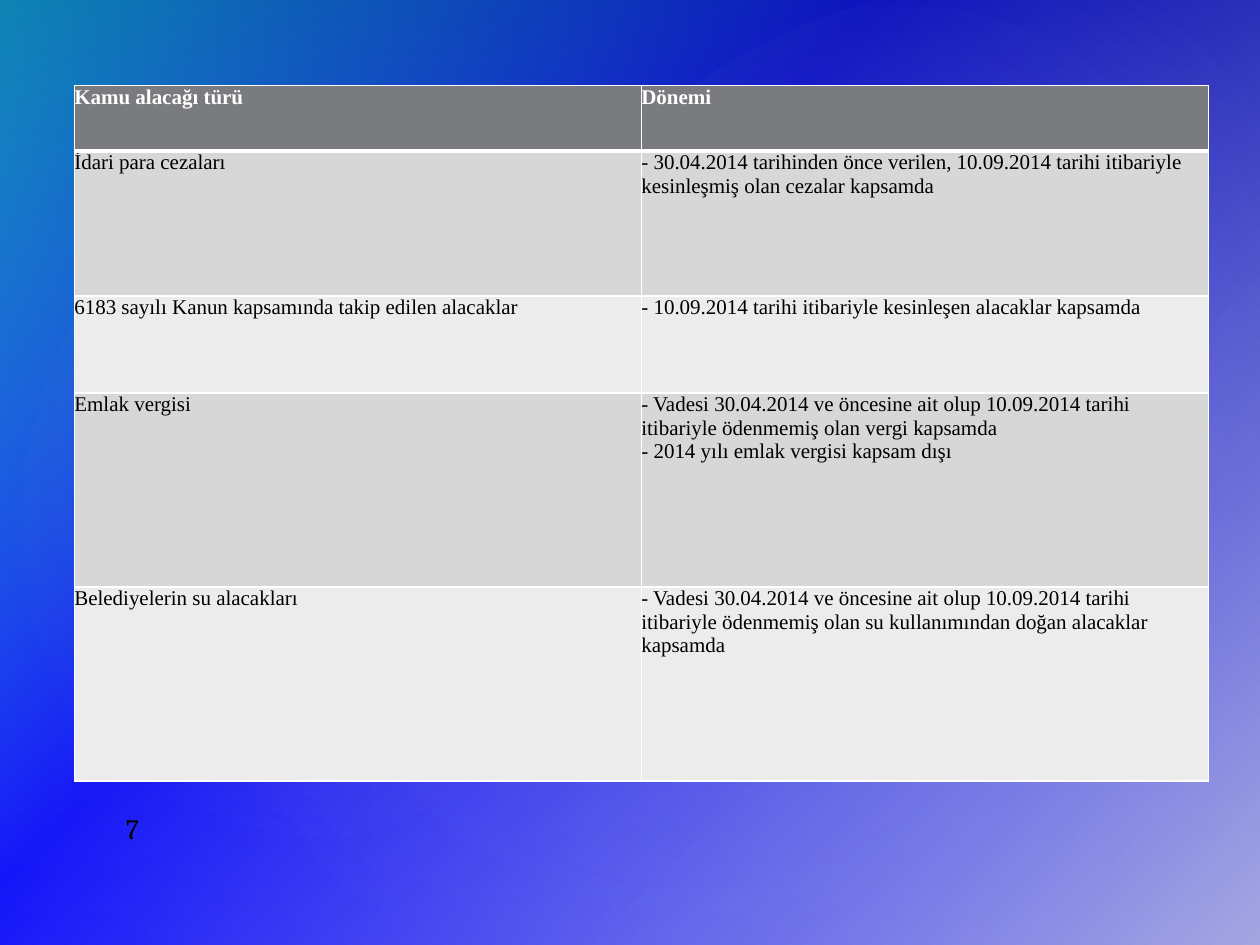
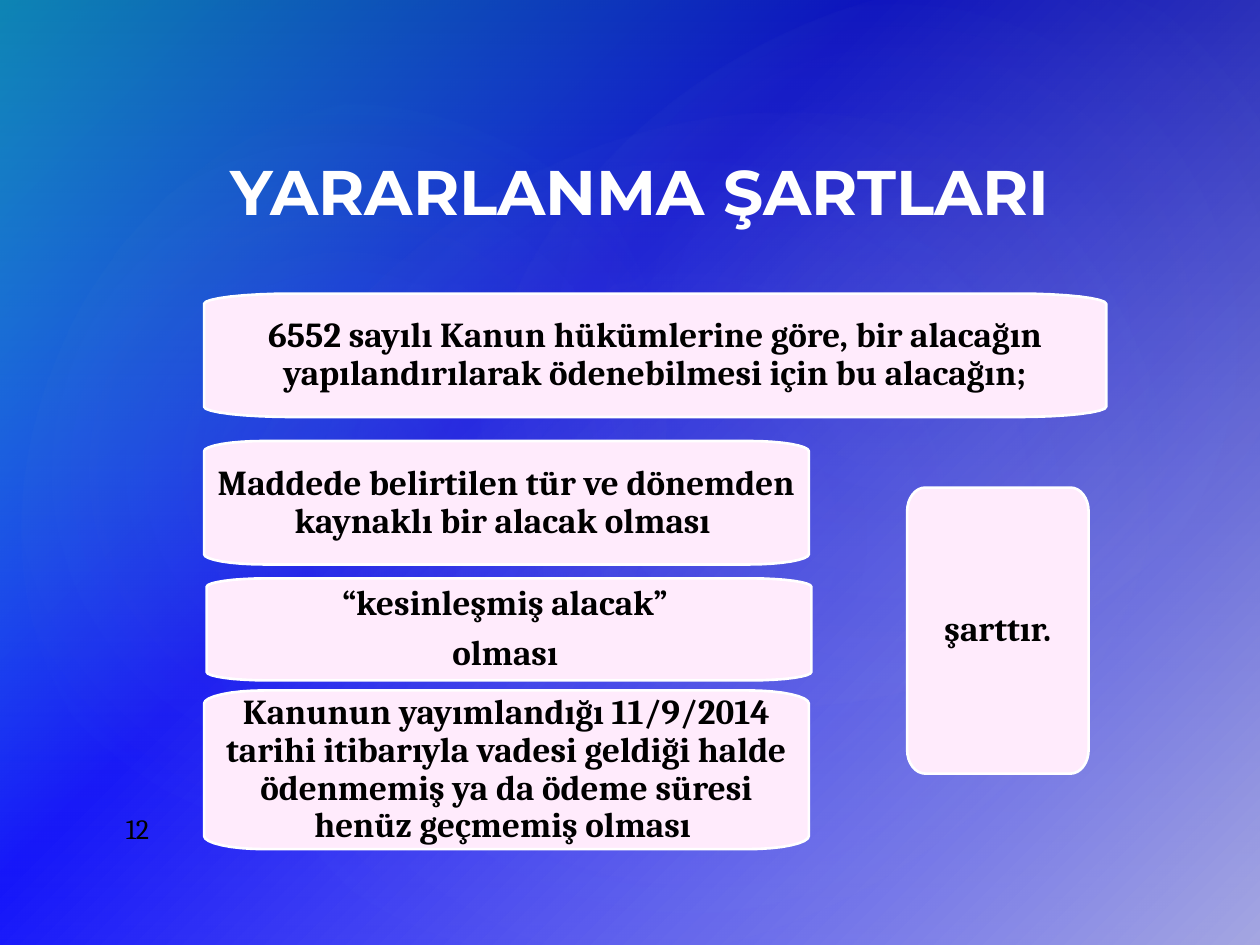
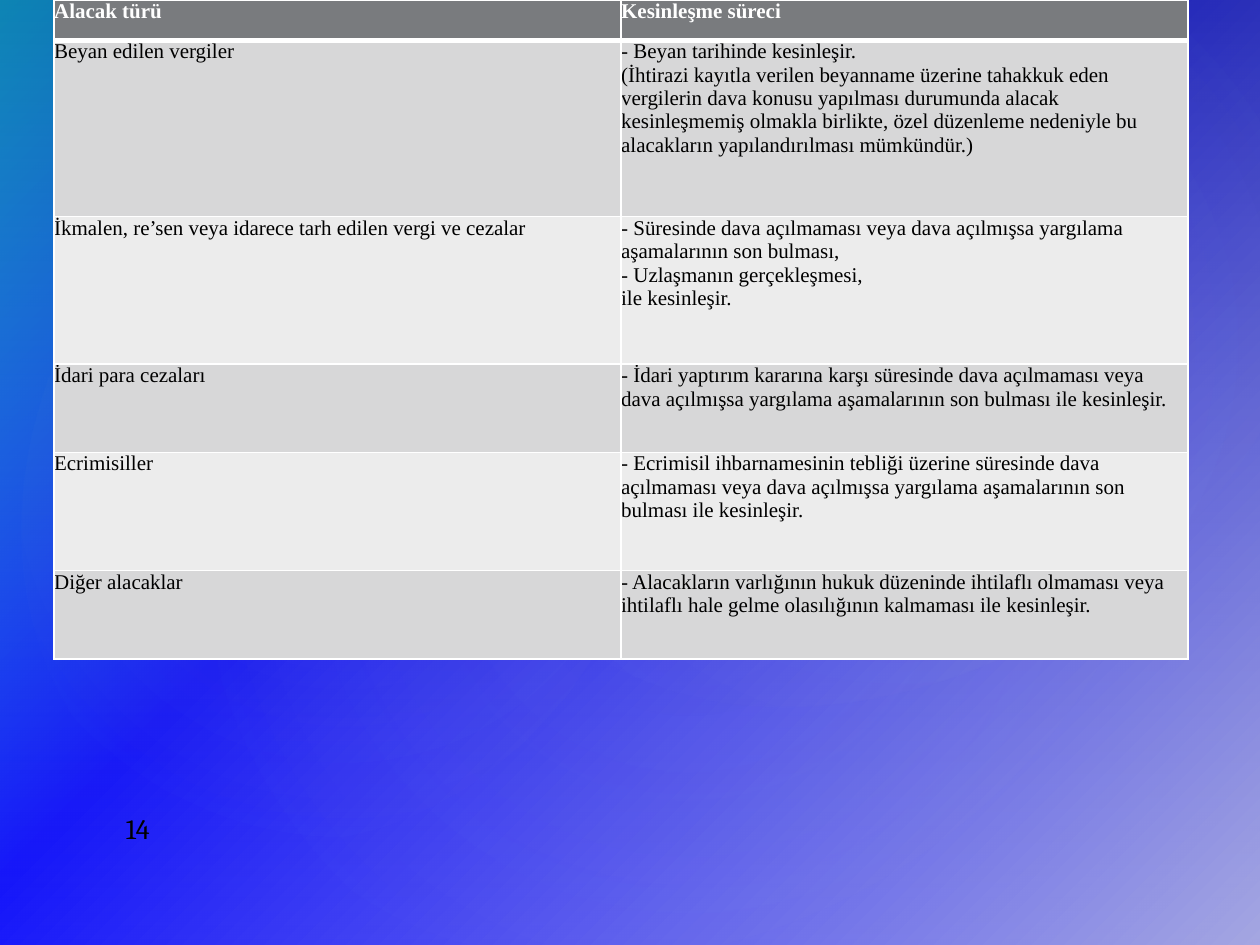
import math
from dataclasses import dataclass

from lxml import etree
from pptx import Presentation
from pptx.dml.color import RGBColor
from pptx.enum.shapes import MSO_SHAPE
from pptx.enum.text import MSO_ANCHOR, PP_ALIGN
from pptx.oxml.ns import qn
from pptx.util import Inches, Pt

OVAL, RECTANGLE = MSO_SHAPE.OVAL, MSO_SHAPE.RECTANGLE
BOTTOM, MIDDLE = MSO_ANCHOR.BOTTOM, MSO_ANCHOR.MIDDLE
CENTER, LEFT = PP_ALIGN.CENTER, PP_ALIGN.LEFT
TITLE_ONLY, BLANK = 5, 6
COLUMNS, ROWS = 100, 75
CORNER_STEPS = 8


@dataclass(frozen=True)
class Theme:
    title_font: str = "Montserrat"
    body_font: str = "Cambria"
    table_font: str = "Times New Roman"
    title_size: int = 36
    body_size: int = 20
    number_size: int = 16
    table_size: int = 12
    white: str = "FFFFFF"
    black: str = "000000"
    card: str = "FFEBFC"
    header: str = "797B7E"
    bands: tuple = ("D7D7D8", "ECECEC")
    # Gradient stops: position, colour, opacity (all but colour in percent)
    backdrop: tuple = ((0, "00B0F0", 100), (40, "0000FF", 100), (100, "A0A1E3", 100))
    veil: tuple = ((0, "28374A", 36), (100, "CDD7D9", 10))
    # Soft ovals: place on the grid, rotation, opacity at the centre
    glows: tuple = (
        ((15, 11.4, 79.2, 62.4), 328.7, 7),
        ((-3, 12.8, 60.6, 49), 294.3, 8),
        ((35.8, 1.3, 70.9, 52), 328.7, 8),
    )
    glow_centre: str = "91A7C4"
    glow_edge: str = "CDD7D9"


def add_child(parent, tag, **attributes):
    child = etree.SubElement(parent, qn(tag))
    for name, value in attributes.items():
        child.set(name, str(value))
    return child


def paint_gradient(fill, holder, stops, angle=None):
    """Fill with a linear gradient, or with one from the centre if no angle is given."""
    fill.background()
    gradient = etree.Element(qn("a:gradFill"), rotWithShape="1")
    stop_list = add_child(gradient, "a:gsLst")
    for position, color, opacity in stops:
        stop = add_child(stop_list, "a:gs", pos=position * 1000)
        shade = add_child(stop, "a:srgbClr", val=color)
        if opacity < 100:
            add_child(shade, "a:alpha", val=opacity * 1000)
    if angle is None:
        centre = add_child(gradient, "a:path", path="circle")
        add_child(centre, "a:fillToRect", l=50000, t=50000, r=50000, b=50000)
    else:
        add_child(gradient, "a:lin", ang=angle * 60000, scaled=0)
    holder.replace(holder.find(qn("a:noFill")), gradient)


def write(frame, text, *, font, size, color, bold=False, align=LEFT,
          anchor=None, insets=None, line_spacing=None, space_after=None):
    """Write one paragraph for each line of the text."""
    frame.word_wrap = True
    if anchor is not None:
        frame.vertical_anchor = anchor
    if insets:
        (frame.margin_left, frame.margin_top,
         frame.margin_right, frame.margin_bottom) = map(Inches, insets)
    for index, line in enumerate(text.split("\n")):
        para = frame.add_paragraph() if index else frame.paragraphs[0]
        para.alignment = align
        para.line_spacing = line_spacing
        para.space_after = space_after
        span = para.add_run()
        span.text = line
        span.font.name, span.font.size, span.font.bold = font, Pt(size), bold
        span.font.color.rgb = RGBColor.from_string(color)


def draw_borders(cell, color, widths):
    """Set the left, right, top and bottom border, with widths in points."""
    properties = cell._tc.get_or_add_tcPr()
    for index, (side, width) in enumerate(zip("LRTB", widths)):
        border = etree.Element(qn(f"a:ln{side}"), w=str(Pt(width)))
        add_child(add_child(border, "a:solidFill"), "a:srgbClr", val=color)
        properties.insert(index, border)


class Pages:
    def __init__(self, deck, theme):
        self.deck, self.theme, self.slide = deck, theme, None

    def place(self, left, top, width, height):
        """Turn grid columns and rows into lengths."""
        column, row = self.deck.slide_width / COLUMNS, self.deck.slide_height / ROWS
        return [round(length) for length in
                (left * column, top * row, width * column, height * row)]

    def start(self, number, title=None):
        layout = self.deck.slide_layouts[TITLE_ONLY if title else BLANK]
        self.slide = self.deck.slides.add_slide(layout)
        if title:
            self.title(title)
        self.number(number)

    def title(self, text):
        box = self.slide.shapes.title
        box.left, box.top, box.width, box.height = self.place(13, 10, 75.6, 8.6)
        write(box.text_frame, text, font=self.theme.title_font, size=self.theme.title_size,
              color=self.theme.white, bold=True, align=CENTER, anchor=BOTTOM)

    def number(self, number):
        box = self.slide.shapes.add_textbox(*self.place(9, 63.9, 23.3, 3.3))
        write(box.text_frame, str(number), font=self.theme.body_font,
              size=self.theme.number_size, color=self.theme.black,
              anchor=BOTTOM, insets=(0.1, 0.05, 0.1, 0.01))

    def dress_master(self):
        """Give the master its background, veil and glows, drawn on the current slide first."""
        theme, master = self.theme, self.deck.slide_master
        fill = master.background.fill
        paint_gradient(fill, master.element.find(".//" + qn("p:bgPr")), theme.backdrop, 45)
        layers = [(RECTANGLE, (0, 0, COLUMNS, ROWS), 0, theme.veil, 90)]
        for area, rotation, opacity in theme.glows:
            stops = ((0, theme.glow_centre, opacity), (58, theme.glow_edge, 0))
            layers.append((OVAL, area, rotation, stops, None))
        for index, (kind, area, rotation, stops, angle) in enumerate(layers):
            layer = self.slide.shapes.add_shape(kind, *self.place(*area))
            layer.rotation = rotation
            layer.shadow.inherit = False
            layer.line.fill.background()
            paint_gradient(layer.fill, layer.element.spPr, stops, angle)
            layer.element.nvSpPr.cNvPr.set("id", str(100 + index))
            master.shapes.element.insert(2 + index, layer.element)

    def card(self, text, *area):
        """Add a box whose corners are quarter ellipses in proportion to its sides."""
        left, top, width, height = self.place(*area)
        radius_x, radius_y = width / 10, height / 12
        points = []
        for quarter, (side_x, side_y) in enumerate(((1, 1), (-1, 1), (-1, -1), (1, -1))):
            centre_x = left + width / 2 + side_x * (width / 2 - radius_x)
            centre_y = top + height / 2 + side_y * (height / 2 - radius_y)
            for step in range(CORNER_STEPS + 1):
                angle = (quarter + step / CORNER_STEPS) * math.pi / 2
                points.append((round(centre_x + radius_x * math.cos(angle)),
                               round(centre_y + radius_y * math.sin(angle))))
        outline = self.slide.shapes.build_freeform(*points[0])
        outline.add_line_segments(points[1:], close=True)
        box = outline.convert_to_shape()
        box.shadow.inherit = False
        box.fill.solid()
        box.fill.fore_color.rgb = RGBColor.from_string(self.theme.card)
        box.line.color.rgb = RGBColor.from_string(self.theme.white)
        box.line.width = Pt(1.5)
        write(box.text_frame, text, font=self.theme.body_font, size=self.theme.body_size,
              color=self.theme.black, bold=True, align=CENTER, anchor=MIDDLE,
              insets=(0.07,) * 4, line_spacing=0.9, space_after=Pt(7))

    def table(self, left, top, row_heights, rows):
        theme = self.theme
        area = self.place(left, top, 90, sum(row_heights))
        table = self.slide.shapes.add_table(len(rows), len(rows[0]), *area).table
        table.horz_banding = False
        for row_index, (height, texts) in enumerate(zip(row_heights, rows)):
            table.rows[row_index].height = self.place(0, 0, 0, height)[3]
            is_header = row_index == 0
            color = theme.header if is_header else theme.bands[(row_index - 1) % 2]
            widths = (1, 1, 3 if row_index == 1 else 1, 3 if is_header else 1)
            for column_index, text in enumerate(texts):
                cell = table.cell(row_index, column_index)
                cell.margin_left = cell.margin_right = 0
                cell.margin_top = cell.margin_bottom = 0
                cell.fill.solid()
                cell.fill.fore_color.rgb = RGBColor.from_string(color)
                draw_borders(cell, theme.white, widths)
                write(cell.text_frame, text, font=theme.table_font, size=theme.table_size,
                      color=theme.white if is_header else theme.black, bold=is_header)


PERIODS = (
    ("Kamu alacağı türü", "Dönemi"),
    ("İdari para cezaları",
     "- 30.04.2014 tarihinden önce verilen, 10.09.2014 tarihi itibariyle "
     "kesinleşmiş olan cezalar kapsamda"),
    ("6183 sayılı Kanun kapsamında takip edilen alacaklar",
     "- 10.09.2014 tarihi itibariyle kesinleşen alacaklar kapsamda"),
    ("Emlak vergisi",
     "- Vadesi 30.04.2014 ve öncesine ait olup 10.09.2014 tarihi itibariyle "
     "ödenmemiş olan vergi kapsamda\n"
     "- 2014 yılı emlak vergisi kapsam dışı"),
    ("Belediyelerin su alacakları",
     "- Vadesi 30.04.2014 ve öncesine ait olup 10.09.2014 tarihi itibariyle "
     "ödenmemiş olan su kullanımından doğan alacaklar kapsamda"),
)

CONDITIONS = (
    ("6552 sayılı Kanun hükümlerine göre, bir alacağın yapılandırılarak "
     "ödenebilmesi için bu alacağın;", 16.2, 23.3, 71.6, 9.8),
    ("Maddede belirtilen tür ve dönemden kaynaklı bir alacak olması ", 16.2, 35, 48, 9.8),
    ("“kesinleşmiş alacak” \nolması ", 16.4, 45.9, 48, 8.1),
    ("Kanunun yayımlandığı 11/9/2014 tarihi itibarıyla vadesi geldiği halde "
     "ödenmemiş ya da ödeme süresi henüz geçmemiş olması ", 16.2, 54.8, 48, 12.6),
    ("şarttır.", 72, 38.7, 14.4, 22.7),
)

FINALITY = (
    ("Alacak türü", "Kesinleşme süreci"),
    ("Beyan edilen vergiler",
     "- Beyan tarihinde kesinleşir.\n"
     "(İhtirazi kayıtla verilen beyanname üzerine tahakkuk eden vergilerin dava konusu "
     "yapılması durumunda alacak kesinleşmemiş olmakla birlikte, özel düzenleme nedeniyle "
     "bu alacakların yapılandırılması mümkündür.)"),
    ("İkmalen, re’sen veya idarece tarh edilen vergi ve cezalar",
     "- Süresinde dava açılmaması veya dava açılmışsa yargılama aşamalarının son bulması,\n"
     "- Uzlaşmanın gerçekleşmesi,\n"
     "ile kesinleşir."),
    ("İdari para cezaları",
     "- İdari yaptırım kararına karşı süresinde dava açılmaması veya dava açılmışsa "
     "yargılama aşamalarının son bulması ile kesinleşir."),
    ("Ecrimisiller",
     "- Ecrimisil ihbarnamesinin tebliği üzerine süresinde dava açılmaması veya dava "
     "açılmışsa yargılama aşamalarının son bulması ile kesinleşir."),
    ("Diğer alacaklar",
     "- Alacakların varlığının hukuk düzeninde ihtilaflı olmaması veya ihtilaflı hale "
     "gelme olasılığının kalmaması ile kesinleşir."),
)


def main():
    deck = Presentation()
    deck.slide_width, deck.slide_height = Inches(10), Inches(7.5)
    pages = Pages(deck, Theme())

    pages.start(7)
    pages.dress_master()
    pages.table(5.9, 6.8, (5.2, 11.5, 7.7, 15.4, 15.4), PERIODS)

    pages.start(12, "YARARLANMA ŞARTLARI")
    for condition in CONDITIONS:
        pages.card(*condition)

    pages.start(14)
    pages.table(4.3, 0, (3.2, 14, 11.7, 7, 9.4, 7), FINALITY)

    deck.save("out.pptx")


if __name__ == "__main__":
    main()
